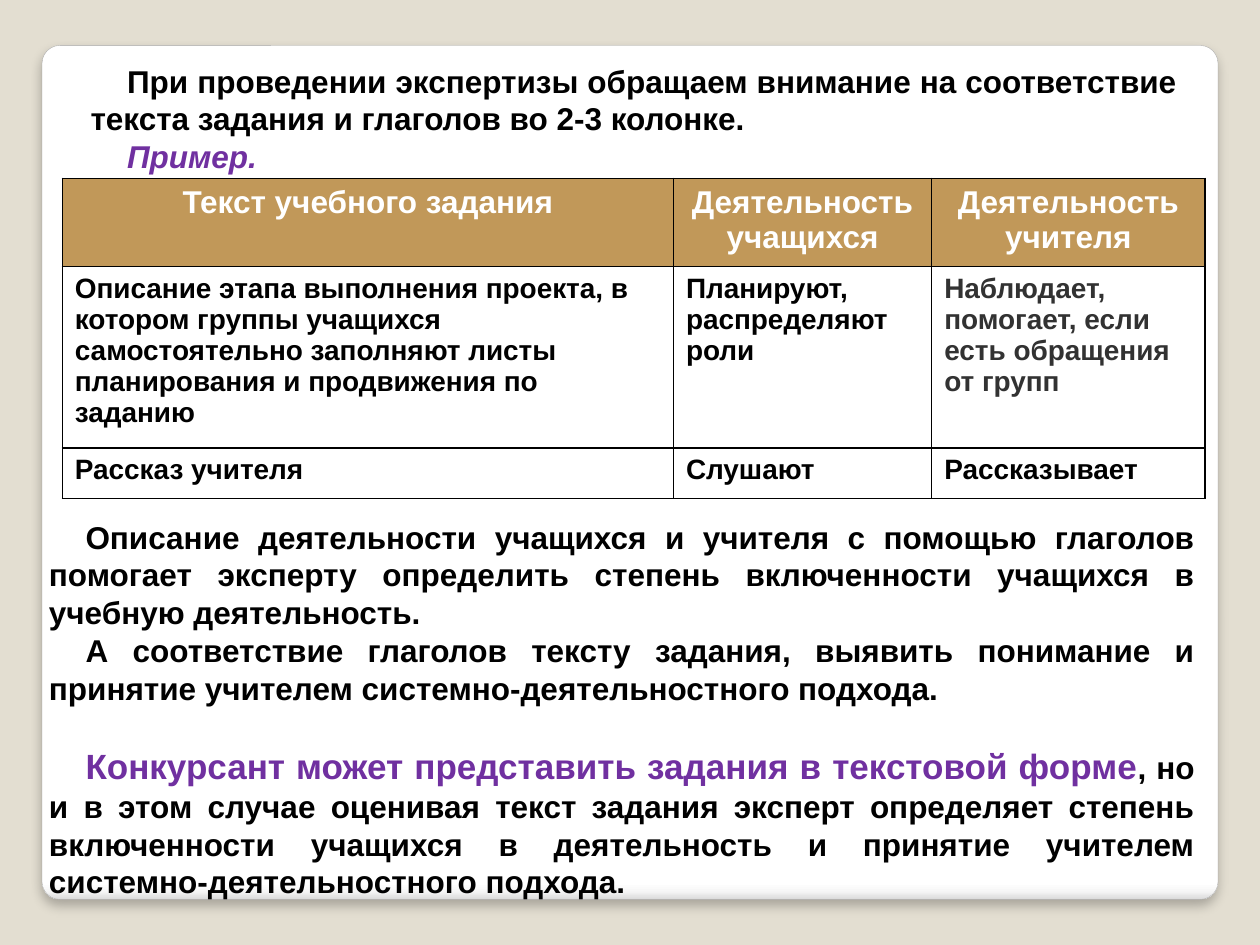
from lxml import etree
from pptx import Presentation
from pptx.dml.color import RGBColor
from pptx.enum.shapes import MSO_SHAPE
from pptx.enum.text import PP_ALIGN
from pptx.oxml import parse_xml
from pptx.oxml.ns import nsdecls, qn
from pptx.util import Pt

ROUND = MSO_SHAPE.ROUNDED_RECTANGLE
CENTER, LEFT, FULL = PP_ALIGN.CENTER, PP_ALIGN.LEFT, PP_ALIGN.JUSTIFY
BLACK = RGBColor(0, 0, 0)
WHITE = RGBColor(255, 255, 255)
SAND = RGBColor(0xE3, 0xDE, 0xD1)
TAN = RGBColor(0xC1, 0x98, 0x59)
GRAY = RGBColor(0x32, 0x32, 0x32)
EDGE = RGBColor(0xA4, 0xA4, 0xA4)
VIOLET = RGBColor(0x70, 0x30, 0xA0)

SHADOW = f"""<a:effectLst {nsdecls('a')}>
<a:outerShdw blurRad="76200" dist="50800" dir="5400000" algn="tl" rotWithShape="0">
<a:srgbClr val="000000"><a:alpha val="25000"/></a:srgbClr></a:outerShdw></a:effectLst>"""
STOPS = [(0, "FFFFFF"), (98, "FFFFFF"), (99, "F7F7F7"), (100, "DADADA")]


class Deck:
    font = "Arial"
    indent = 20.88

    def __init__(self):
        self.file = Presentation()
        self.file.slide_width, self.file.slide_height = Pt(720), Pt(540)
        self.slide = self.file.slides.add_slide(self.file.slide_layouts[6])
        fill = self.slide.background.fill
        fill.solid()
        fill.fore_color.rgb = SAND

    def style(self, font, size, color, slant=None):
        font.name, font.size, font.bold = self.font, Pt(size), True
        font.italic = slant
        font.color.rgb = color

    def panel(self, x, y, w, h):
        shape = self.slide.shapes.add_shape(ROUND, Pt(x), Pt(y), Pt(w), Pt(h))
        shape.adjustments[0] = 0.021
        shape.line.color.rgb = EDGE
        shape.line.width = Pt(0.16)
        shape.fill.gradient()
        shape.fill.gradient_angle = 270
        stops = shape.fill._fill._gradFill.find(qn("a:gsLst"))
        for old in list(stops):
            stops.remove(old)
        for pos, tone in STOPS:
            stop = etree.SubElement(stops, qn("a:gs"), pos=str(pos * 1000))
            etree.SubElement(stop, qn("a:srgbClr"), val=tone)
        shape._element.spPr.append(parse_xml(SHADOW))

    def text(self, x, y, w, h, paras):
        frame = self.slide.shapes.add_textbox(Pt(x), Pt(y), Pt(w), Pt(h)).text_frame
        frame.word_wrap = True
        for i, (gap, runs) in enumerate(paras):
            para = frame.paragraphs[0] if i == 0 else frame.add_paragraph()
            para.alignment = FULL
            para.space_before = Pt(gap)
            para._p.get_or_add_pPr().set("indent", str(Pt(self.indent)))
            for words, *look in runs:
                run = para.add_run()
                run.text = words
                self.style(run.font, *look)

    def border(self, cell):
        props = cell._tc.get_or_add_tcPr()
        for i, side in enumerate(("lnL", "lnR", "lnT", "lnB")):
            props.insert(i, parse_xml(
                f'<a:{side} {nsdecls("a")} w="12700"><a:solidFill>'
                f'<a:srgbClr val="000000"/></a:solidFill></a:{side}>'))

    def table(self, x, y, cols, rows, data):
        grid = self.slide.shapes.add_table(
            len(rows), len(cols), Pt(x), Pt(y), Pt(sum(cols)), Pt(sum(rows))).table
        for col, wide in zip(grid.columns, cols):
            col.width = Pt(wide)
        for r, (high, line) in enumerate(zip(rows, data)):
            grid.rows[r].height = Pt(high)
            for c, words in enumerate(line):
                cell = grid.cell(r, c)
                cell.text = words
                if r == 0:
                    cell.fill.solid()
                    cell.fill.fore_color.rgb = TAN
                    size, color, side = 18, WHITE, CENTER
                else:
                    cell.fill.background()
                    color = GRAY if (r, c) == (1, 2) else BLACK
                    size, side = 16, LEFT
                for para in cell.text_frame.paragraphs:
                    para.alignment = side
                    self.style(para.font, size, color)
                self.border(cell)


def main():
    deck = Deck()
    deck.panel(24, 26, 672, 488)
    deck.text(44.64, 31.68, 635, 72.7, [
        (0, [("При проведении экспертизы обращаем внимание на соответствие "
              "текста задания и глаголов во 2-3 колонке.", 18, BLACK)]),
        (0, [("Пример.", 18, VIOLET, True)]),
    ])
    deck.table(35.6, 102, [349.2, 147.6, 156.2], [50, 103.5, 29], [
        ["Текст учебного задания", "Деятельность учащихся", "Деятельность учителя"],
        ["Описание этапа выполнения проекта, в котором группы учащихся самостоятельно "
         "заполняют листы планирования и продвижения по заданию",
         "Планируют,\nраспределяют роли",
         "Наблюдает, помогает, если есть обращения от групп"],
        ["Рассказ учителя", "Слушают", "Рассказывает"],
    ])
    deck.text(20.88, 292.3, 668.9, 227.5, [
        (0, [("Описание деятельности учащихся и учителя с помощью глаголов помогает "
              "эксперту определить степень включенности учащихся в учебную "
              "деятельность.", 18, BLACK)]),
        (0, [("А соответствие глаголов тексту задания, выявить понимание и принятие "
              "учителем системно-деятельностного подхода.", 18, BLACK)]),
        (21.7, [("Конкурсант может представить задания в текстовой форме", 20, VIOLET),
                (", но и в этом случае оценивая текст задания эксперт определяет "
                 "степень включенности учащихся в деятельность и принятие учителем "
                 "системно-деятельностного подхода.", 18, BLACK)]),
    ])
    deck.file.save("out.pptx")


if __name__ == "__main__":
    main()
